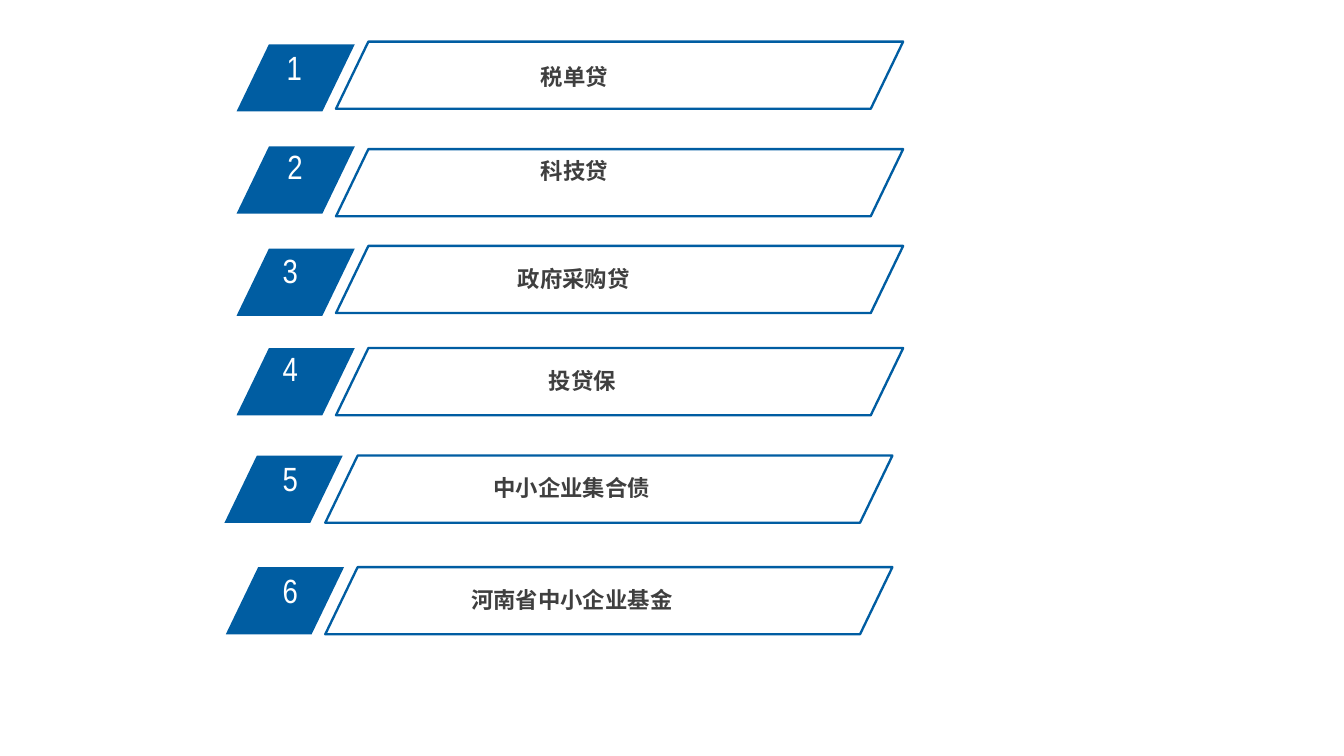
from pptx import Presentation, util as u
from pptx.dml.color import RGBColor
from pptx.enum import shapes, text
from pptx.oxml.ns import qn
from lxml import etree

colours = {"blue": "005DA2", "white": "FFFFFF", "ink": "3F3F3F"}
deck = Presentation()
deck.slide_width = u.Inches(10)
deck.slide_height = deck.slide_width * 9 // 16
page = deck.slides.add_slide(deck.slide_layouts[6])
column = deck.slide_width // 1000


def add_slanted(left, top, width):
    slanted = page.shapes.add_shape(
        shapes.MSO_SHAPE.PARALLELOGRAM,
        *(column * n for n in (left, top, width, 50)))
    slanted.adjustments[0] = 0.482
    slanted.shadow.inherit = False
    return slanted


def add_label(words, box, size, font, colour, bold, inset):
    label = page.shapes.add_textbox(*(column * n for n in box))
    frame = label.text_frame
    frame.word_wrap = True
    frame.margin_left = frame.margin_right = column * inset[0]
    frame.margin_top = frame.margin_bottom = column * inset[1]
    line = frame.paragraphs[0]
    line.alignment = text.PP_ALIGN.CENTER
    run = line.add_run()
    run.text = words
    run.font.size = u.Pt(size)
    run.font.name = font
    run.font.bold = bold
    run.font.color.rgb = RGBColor.from_string(colours[colour])
    etree.SubElement(run._r.get_or_add_rPr(), qn("a:ea")).set("typeface", font)


products = [
    ("税单贷", (176, 33), (30, 58), (250, 31), (273, 43, 309)),
    ("科技贷", (176, 109), (104, 59), (250, 111), (273, 113, 309)),
    ("政府采购贷", (176, 185), (181, 52), (250, 183), (375, 193, 104)),
    ("投贷保", (176, 259), (254, 52), (250, 259), (265, 269, 337)),
    ("中小企业集合债", (167, 339), (336, 52), (242, 339), (257, 349, 337)),
    ("河南省中小企业基金", (168, 422), (419, 52), (242, 422), (257, 432, 337)),
]

for number, (product, tag_at, (number_top, number_width), frame_at, title_box) in enumerate(products, 1):
    tag = add_slanted(*tag_at, 88)
    tag.fill.solid()
    tag.fill.fore_color.rgb = RGBColor.from_string(colours["blue"])
    tag.line.fill.background()
    add_label(str(number), (190, number_top, number_width, 40),
              18, "Arial Narrow", "white", False, (10, 5))

    outline = add_slanted(*frame_at, 422)
    outline.fill.background()
    outline.line.color.rgb = RGBColor.from_string(colours["blue"])
    outline.line.width = u.Pt(1.25)
    add_label(product, (*title_box, 28),
              12, "Noto Sans CJK SC", "ink", True, (7, 4))

deck.save("out.pptx")
